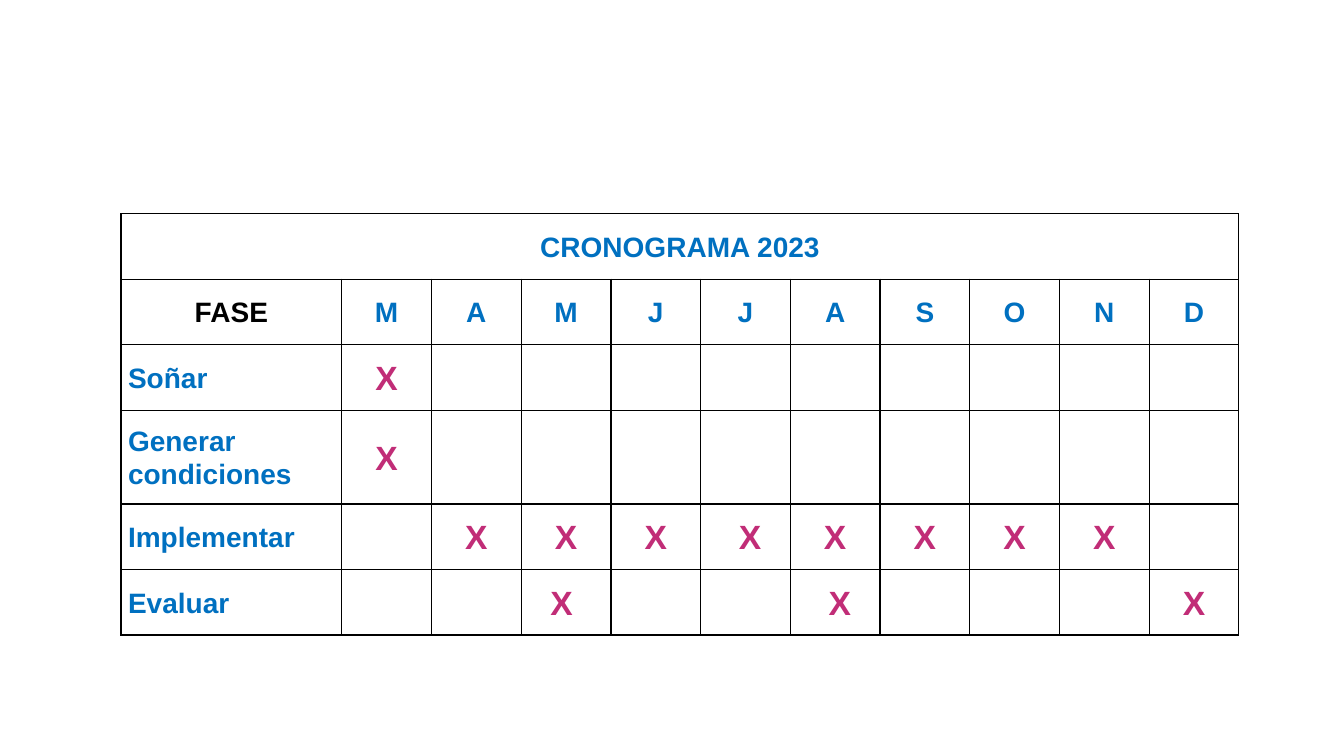
from lxml import etree
from pptx import Presentation
from pptx.dml.color import RGBColor
from pptx.enum.text import MSO_ANCHOR, PP_ALIGN
from pptx.oxml.ns import qn
from pptx.util import Inches, Pt

MIDDLE = MSO_ANCHOR.MIDDLE
LEFT, CENTER = PP_ALIGN.LEFT, PP_ALIGN.CENTER

TITLE = "CRONOGRAMA 2023"
PHASE_HEADING = "FASE"
MONTHS = "MAMJJASOND"
PHASES = [
    ("Soñar", [1]),
    ("Generar condiciones", [1]),
    ("Implementar", [2, 3, 4, 5, 6, 7, 8, 9]),
    ("Evaluar", [3, 6, 10]),
]
MARK = "X"
NUDGE = 0.09
NUDGED_RIGHT = {("Implementar", 5), ("Evaluar", 6)}
NUDGED_LEFT = {("Evaluar", 3)}

BLUE, BLACK, WHITE, MAGENTA = "0070C0", "000000", "FFFFFF", "C12D77"
TABLE_LEFT, TABLE_TOP = 1.2, 2.12
PHASE_WIDTH, MONTH_WIDTH = 2.19, 0.89
ROW_HEIGHTS = [0.65, 0.65, 0.65, 0.93, 0.65, 0.65]
SIDE_MARGIN = 0.07


def rgb(color):
    return RGBColor.from_string(color)


def frame_cell(cell):
    properties = cell._tc.get_or_add_tcPr()
    for side in ("a:lnL", "a:lnR", "a:lnT", "a:lnB"):
        line = etree.SubElement(properties, qn(side), w=str(Pt(1)))
        fill = etree.SubElement(line, qn("a:solidFill"))
        etree.SubElement(fill, qn("a:srgbClr"), val=BLACK)
    cell.fill.solid()
    cell.fill.fore_color.rgb = rgb(WHITE)
    cell.vertical_anchor = MIDDLE
    cell.margin_left = cell.margin_right = Inches(SIDE_MARGIN)
    cell.margin_top = cell.margin_bottom = 0


def write(cell, text, color=BLUE, size=20, align=CENTER):
    cell.text = text
    paragraph = cell.text_frame.paragraphs[0]
    paragraph.alignment = align
    paragraph.line_spacing = 1.07
    paragraph.space_after = Pt(6)
    paragraph.font.name = "Arial"
    paragraph.font.size = Pt(size)
    paragraph.font.bold = True
    paragraph.font.color.rgb = rgb(color)


def main():
    deck = Presentation()
    deck.slide_width, deck.slide_height = Inches(13.33), Inches(7.5)
    slide = deck.slides.add_slide(deck.slide_layouts[6])

    widths = [PHASE_WIDTH] + [MONTH_WIDTH] * len(MONTHS)
    schedule = slide.shapes.add_table(
        len(ROW_HEIGHTS), len(widths),
        Inches(TABLE_LEFT), Inches(TABLE_TOP),
        Inches(sum(widths)), Inches(sum(ROW_HEIGHTS)),
    ).table
    schedule.first_row = schedule.horz_banding = False
    for column, width in zip(schedule.columns, widths):
        column.width = Inches(width)
    for row, height in zip(schedule.rows, ROW_HEIGHTS):
        row.height = Inches(height)
    for cell in schedule.iter_cells():
        frame_cell(cell)

    schedule.cell(0, 0).merge(schedule.cell(0, len(MONTHS)))
    write(schedule.cell(0, 0), TITLE)
    write(schedule.cell(1, 0), PHASE_HEADING, BLACK)
    for month, initial in enumerate(MONTHS, 1):
        write(schedule.cell(1, month), initial)

    for row, (phase, active_months) in enumerate(PHASES, 2):
        write(schedule.cell(row, 0), phase, align=LEFT)
        for month in active_months:
            cell = schedule.cell(row, month)
            write(cell, MARK, MAGENTA, 24)
            if (phase, month) in NUDGED_RIGHT:
                cell.margin_left = Inches(SIDE_MARGIN + NUDGE)
            if (phase, month) in NUDGED_LEFT:
                cell.margin_right = Inches(SIDE_MARGIN + NUDGE)

    deck.save("out.pptx")


if __name__ == "__main__":
    main()
